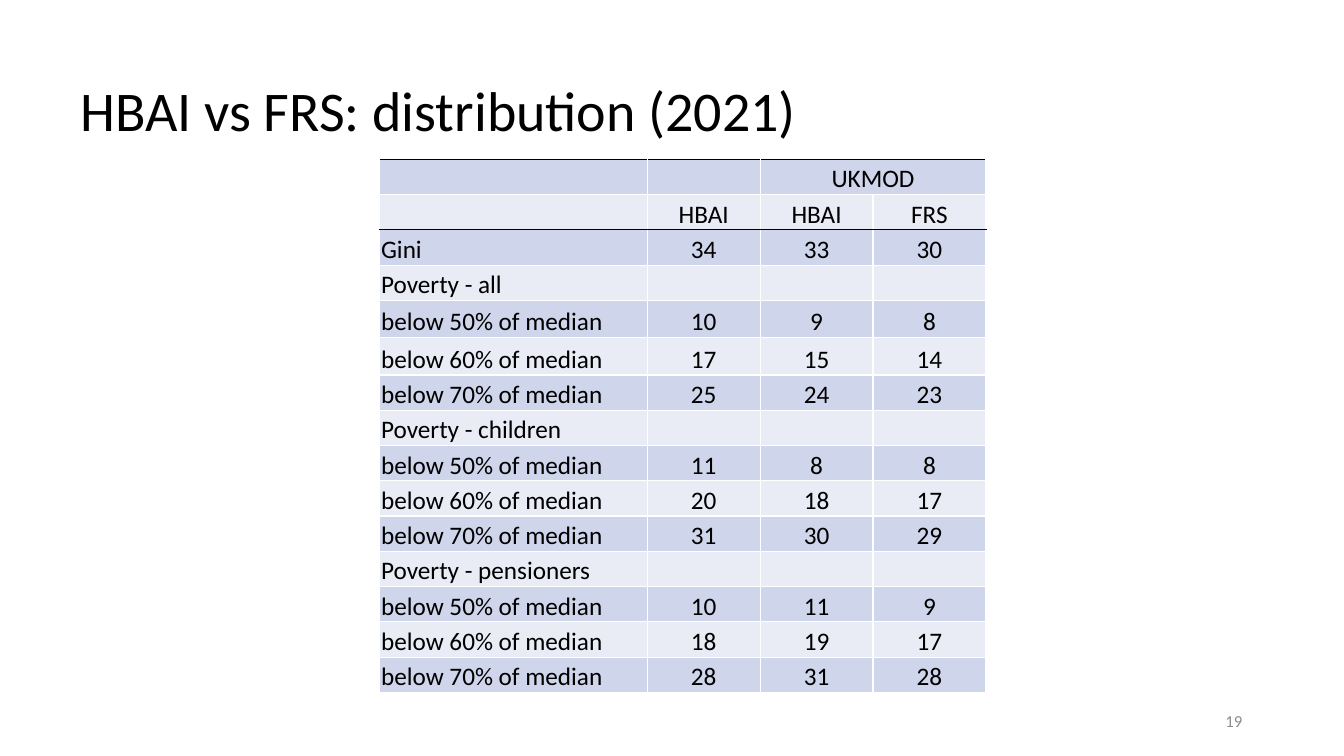
from dataclasses import dataclass

from lxml.etree import SubElement
from pptx import Presentation
from pptx.dml.color import RGBColor
from pptx.enum.text import MSO_ANCHOR, PP_ALIGN
from pptx.oxml.ns import qn
from pptx.slide import Slide
from pptx.table import Table, _Cell
from pptx.text.text import TextFrame
from pptx.util import Inches, Pt

WIDE = Inches(13.33)
HIGH = Inches(7.5)
FONT = "Calibri"
BLACK = RGBColor(0x00, 0x00, 0x00)
WHITE = RGBColor(0xFF, 0xFF, 0xFF)
GREY = RGBColor(0x8C, 0x8C, 0x8C)
DARK = RGBColor(0xCF, 0xD5, 0xEA)
LIGHT = RGBColor(0xE9, 0xEB, 0xF5)


@dataclass(frozen=True)
class Box:
    left: float
    top: float
    width: float
    height: float


@dataclass(frozen=True)
class Line:
    label: str = ""
    values: tuple[str, ...] = ("", "", "")
    height: float = 4.67


TITLE = Box(5.25, 5.33, 86.27, 19.33)
NUMBER = Box(89.5, 92.67, 3.68, 5.33)
TABLE = Box(28.21, 21.07, 45.15, 70.53)
COLUMNS = (19.95, 8.4, 8.4, 8.4)
TALL = 4.93

LINES = (
    Line(values=("", "UKMOD", "")),
    Line(values=("HBAI", "HBAI", "FRS")),
    Line("Gini", ("34", "33", "30")),
    Line("Poverty - all"),
    Line("below 50% of median", ("10", "9", "8"), TALL),
    Line("below 60% of median", ("17", "15", "14"), TALL),
    Line("below 70% of median", ("25", "24", "23")),
    Line("Poverty - children"),
    Line("below 50% of median", ("11", "8", "8")),
    Line("below 60% of median", ("20", "18", "17")),
    Line("below 70% of median", ("31", "30", "29")),
    Line("Poverty - pensioners"),
    Line("below 50% of median", ("10", "11", "9")),
    Line("below 60% of median", ("18", "19", "17")),
    Line("below 70% of median", ("28", "31", "28")),
)


def across(share: float) -> int:
    return round(WIDE * share / 100)


def down(share: float) -> int:
    return round(HIGH * share / 100)


def place(box: Box) -> tuple[int, int, int, int]:
    return across(box.left), down(box.top), across(box.width), down(box.height)


def write(frame: TextFrame, text: str, *, size: float = 18,
          color: RGBColor = BLACK, align: PP_ALIGN = PP_ALIGN.LEFT,
          space: float = 1.0) -> None:
    part = frame.paragraphs[0]
    part.alignment = align
    part.line_spacing = space
    run = part.add_run()
    run.text = text
    run.font.name = FONT
    run.font.size = Pt(size)
    run.font.color.rgb = color


def add_text(slide: Slide, box: Box, text: str, **format) -> None:
    frame = slide.shapes.add_textbox(*place(box)).text_frame
    frame.word_wrap = True
    frame.vertical_anchor = MSO_ANCHOR.MIDDLE
    write(frame, text, **format)


def edge(cell: _Cell, side: str, color: RGBColor) -> None:
    line = SubElement(cell._tc.get_or_add_tcPr(), qn(f"a:ln{side}"), w=str(Pt(1)))
    fill = SubElement(line, qn("a:solidFill"))
    SubElement(fill, qn("a:srgbClr"), val=str(color))


def style(cell: _Cell, row: int) -> None:
    cell.vertical_anchor = MSO_ANCHOR.BOTTOM
    cell.margin_left = cell.margin_right = cell.margin_top = Inches(0.02)
    cell.margin_bottom = 0
    for side in "LR":
        edge(cell, side, WHITE)
    edge(cell, "T", BLACK if row in (0, 2) else WHITE)
    edge(cell, "B", BLACK if row == 1 else WHITE)
    cell.fill.solid()
    cell.fill.fore_color.rgb = LIGHT if row % 2 else DARK


def fill_row(table: Table, row: int, line: Line) -> None:
    table.rows[row].height = down(line.height)
    for col, text in enumerate((line.label, *line.values)):
        cell = table.cell(row, col)
        style(cell, row)
        if text:
            align = PP_ALIGN.CENTER if col else PP_ALIGN.LEFT
            write(cell.text_frame, text, align=align)


def add_grid(slide: Slide) -> None:
    table = slide.shapes.add_table(len(LINES), len(COLUMNS), *place(TABLE)).table
    table.first_row = False
    table.horz_banding = False
    for col, width in zip(table.columns, COLUMNS):
        col.width = across(width)
    for row, line in enumerate(LINES):
        fill_row(table, row, line)
    table.cell(0, 2).merge(table.cell(0, 3))


def main() -> None:
    deck = Presentation()
    deck.slide_width = WIDE
    deck.slide_height = HIGH
    slide = deck.slides.add_slide(deck.slide_layouts[6])
    add_text(slide, TITLE, "HBAI vs FRS: distribution (2021)", size=40, space=0.9)
    add_text(slide, NUMBER, "19", size=12, color=GREY, align=PP_ALIGN.RIGHT)
    add_grid(slide)
    deck.save("out.pptx")


if __name__ == "__main__":
    main()
